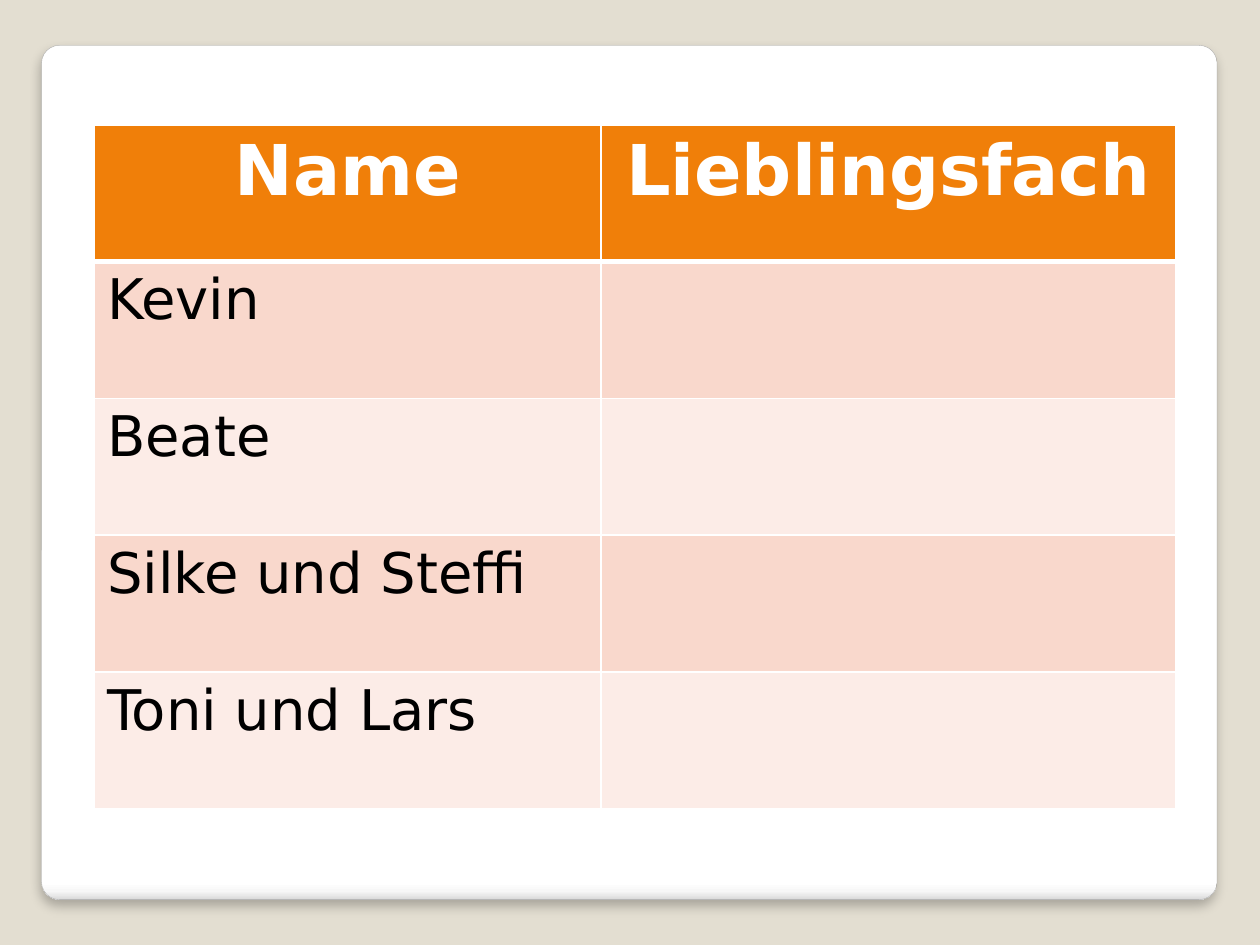
from dataclasses import dataclass

from lxml import etree
from pptx import Presentation
from pptx import util as u
from pptx.dml.color import RGBColor
from pptx.enum import shapes, text
from pptx.oxml import ns


@dataclass(frozen=True)
class Theme:
    font: str = "DejaVu Sans"
    header_size: int = 40
    body_size: int = 32
    background: str = "E3DED1"
    white: str = "FFFFFF"
    black: str = "000000"
    outline: str = "A4A4A4"
    header: str = "F07F09"
    bands: tuple = ("F9D8CC", "FCECE7")
    panel_stops: tuple = ((0, "FFFFFF"), (98, "FFFFFF"), (99, "F7F7F7"), (100, "DADADA"))


def add_node(parent, tag, **attributes):
    values = {key: str(int(value)) if isinstance(value, int) else value
              for key, value in attributes.items()}
    return etree.SubElement(parent, ns.qn(tag), values)


class SlideBuilder:
    def __init__(self, deck, theme):
        self.theme = theme
        self.width, self.height = deck.slide_width, deck.slide_height
        self.slide = deck.slides.add_slide(deck.slide_layouts[6])
        fill = self.slide.background.fill
        fill.solid()
        fill.fore_color.rgb = RGBColor.from_string(theme.background)

    def area(self, left, top, width, height):
        return (int(left * self.width), int(top * self.height),
                int(width * self.width), int(height * self.height))

    def panel(self, *shares):
        box = self.slide.shapes.add_shape(
            shapes.MSO_SHAPE.ROUNDED_RECTANGLE, *self.area(*shares))
        box.adjustments[0] = 0.021
        box.line.color.rgb = RGBColor.from_string(self.theme.outline)
        box.line.width = u.Pt(0.16)
        box.fill.gradient()
        box.fill.gradient_angle = 270
        stops = box.element.spPr.find(".//" + ns.qn("a:gsLst"))
        for stop in list(stops):
            stops.remove(stop)
        for position, color in self.theme.panel_stops:
            stop = add_node(stops, "a:gs", pos=position * 1000)
            add_node(stop, "a:srgbClr", val=color)
        box.shadow.inherit = False
        effects = box.element.spPr.find(ns.qn("a:effectLst"))
        shadow = add_node(effects, "a:outerShdw", blurRad=u.Pt(6), dist=u.Pt(4),
                          dir=90 * 60000, algn="t", rotWithShape=0)
        tint = add_node(shadow, "a:srgbClr", val=self.theme.black)
        add_node(tint, "a:alpha", val=25000)

    def borders(self, cell, **widths):
        properties = cell._tc.get_or_add_tcPr()
        for index, (side, width) in enumerate(widths.items()):
            line = etree.Element(ns.qn(f"a:ln{side}"), w=str(int(u.Pt(width))))
            fill = add_node(line, "a:solidFill")
            add_node(fill, "a:srgbClr", val=self.theme.white)
            properties.insert(index, line)

    def label(self, cell, words, is_header):
        para = cell.text_frame.paragraphs[0]
        if is_header:
            para.alignment = text.PP_ALIGN.CENTER
        span = para.add_run()
        span.text = words
        font = span.font
        font.name = self.theme.font
        font.bold = is_header
        font.size = u.Pt(self.theme.header_size if is_header else self.theme.body_size)
        font.color.rgb = RGBColor.from_string(
            self.theme.white if is_header else self.theme.black)

    def table(self, rows, column_shares, *shares):
        left, top, width, height = self.area(*shares)
        grid = self.slide.shapes.add_table(
            len(rows), len(column_shares), left, top, width, height).table
        for column, share in zip(grid.columns, column_shares):
            column.width = int(width * share)
        for row_index, row in enumerate(rows):
            is_header = row_index == 0
            color = self.theme.header if is_header else self.theme.bands[(row_index - 1) % 2]
            for column_index, words in enumerate(row):
                cell = grid.cell(row_index, column_index)
                cell.fill.solid()
                cell.fill.fore_color.rgb = RGBColor.from_string(color)
                self.borders(cell, L=1, R=1, T=3 if row_index == 1 else 1,
                             B=3 if is_header else 1)
                if words:
                    self.label(cell, words, is_header)


def main():
    deck = Presentation()
    deck.slide_width, deck.slide_height = u.Inches(10), u.Inches(7.5)
    builder = SlideBuilder(deck, Theme())
    builder.panel(0.33 / 10, 0.36 / 7.5, 9.33 / 10, 6.78 / 7.5)
    names = ["Kevin", "Beate", "Silke und Steffi", "Toni und Lars"]
    rows = [("Name", "Lieblingsfach")] + [(name, "") for name in names]
    builder.table(rows, (4.02 / 8.58, 4.56 / 8.58),
                  0.75 / 10, 0.99 / 7.5, 8.58 / 10, 5.43 / 7.5)
    deck.save("out.pptx")


if __name__ == "__main__":
    main()
